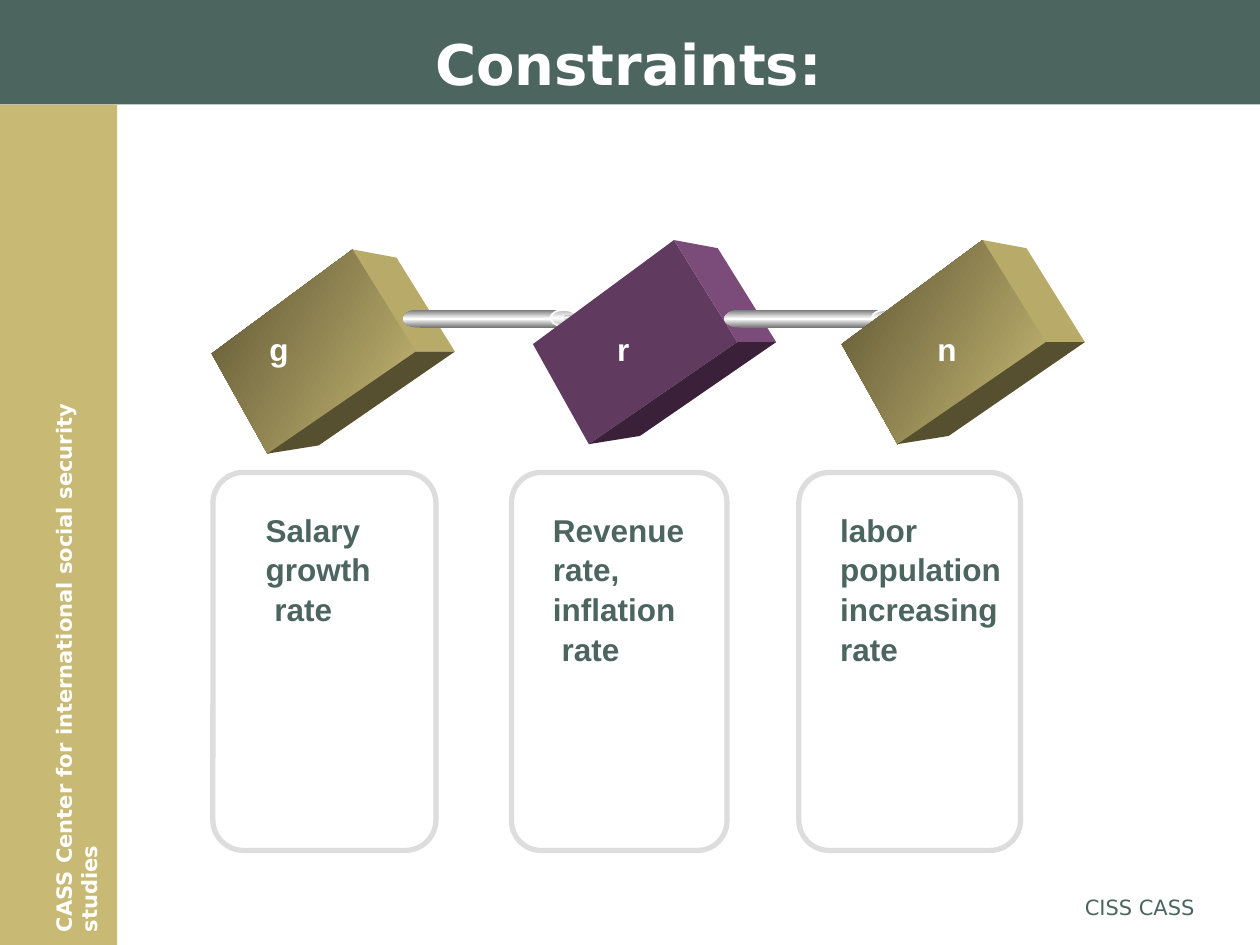
from copy import deepcopy

from pptx import Presentation, util as u
from pptx.dml.color import RGBColor
from pptx.enum import shapes as sh, text as tx

COLUMNS, ROWS = 100, 75
GREEN, SAND, WHITE, GREY = "4C665F", "C8BA74", "FFFFFF", "DDDDDD"
STEEL = ["767676", WHITE, "767676"]
PALE_STEEL = ["B6B6B6", WHITE, "B6B6B6"]
GOLD_FACES = (["5C5433", SAND], "B8AB69", "575030")
PURPLE_FACES = ("613A60", "7B4B7A", "3A2139")

# Corners of a tilted block, as shares of its box: front, side and base
LEFT, TOP, INNER, BOTTOM = (0, 0.51), (0.58, 0), (0.84, 0.5), (0.23, 1)
FAR_TOP, FAR_RIGHT, FAR_BOTTOM = (0.76, 0.04), (1, 0.5), (0.44, 0.96)
BLOCK_FACES = ((LEFT, TOP, INNER, BOTTOM),
               (TOP, FAR_TOP, FAR_RIGHT, INNER),
               (INNER, FAR_RIGHT, FAR_BOTTOM, BOTTOM))

prs = Presentation()
prs.slide_width, prs.slide_height = u.Inches(10), u.Inches(7.5)
COL, ROW = prs.slide_width / COLUMNS, prs.slide_height / ROWS


def rgb(colour):
    return RGBColor.from_string(colour)


def grid(left, top, width, height):
    return [round(n * unit) for n, unit in
            zip((left, top, width, height), (COL, ROW, COL, ROW))]


def paint(shape, fill=None, line=None, line_width=1, angle=90):
    """Fill with one colour, a list of gradient colours, or nothing."""
    shape.shadow.inherit = False
    if isinstance(fill, list):
        shape.fill.gradient()
        shape.fill.gradient_angle = angle
        stop_list = shape.fill._fill._gradFill.gsLst
        while len(stop_list) < len(fill):
            stop_list.append(deepcopy(stop_list[0]))
        for i, (stop, colour) in enumerate(zip(shape.fill.gradient_stops, fill)):
            stop.position = i / (len(fill) - 1)
            stop.color.rgb = rgb(colour)
    elif fill:
        shape.fill.solid()
        shape.fill.fore_color.rgb = rgb(fill)
    else:
        shape.fill.background()
    if line:
        shape.line.color.rgb = rgb(line)
        shape.line.width = u.Pt(line_width)
    else:
        shape.line.fill.background()


def add_preset(slide, kind, box, **look):
    shape = slide.shapes.add_shape(kind, *grid(*box))
    paint(shape, **look)
    return shape


def write(frame, lines, size=18, colour=WHITE, font="Arial", bold=True,
          align=tx.PP_ALIGN.LEFT, anchor=tx.MSO_ANCHOR.TOP, wrap=True, spacing=1.0):
    frame.word_wrap = wrap
    frame.auto_size = tx.MSO_AUTO_SIZE.NONE
    frame.vertical_anchor = anchor
    for i, line in enumerate(lines):
        paragraph = frame.add_paragraph() if i else frame.paragraphs[0]
        paragraph.text = line
        paragraph.alignment = align
        paragraph.line_spacing = spacing
        paragraph.font.size = u.Pt(size)
        paragraph.font.bold = bold
        paragraph.font.name = font
        paragraph.font.color.rgb = rgb(colour)


def add_text(slide, box, lines, **look):
    holder = slide.shapes.add_textbox(*grid(*box))
    write(holder.text_frame, lines, **look)
    return holder


def add_frame(slide, title_text, motto, footer):
    """Title band, sidebar and footer."""
    band, side = 8.3, 9.3
    rect = sh.MSO_SHAPE.RECTANGLE
    add_preset(slide, rect, (0, 0, COLUMNS, band), fill=GREEN)
    add_preset(slide, rect, (0, band, side, ROWS - band), fill=SAND)
    title = slide.shapes.title
    title.left, title.top, title.width, title.height = grid(9.5, 1.9, 80.8, 6.2)
    write(title.text_frame, [title_text], size=32, font="DejaVu Sans",
          align=tx.PP_ALIGN.CENTER, anchor=tx.MSO_ANCHOR.MIDDLE)
    slide.shapes._spTree.append(title._element)
    add_text(slide, (-20.4, 48, 50.9, 3), [motto], size=12,
             font="DejaVu Sans").rotation = 270
    add_text(slide, (68.3, 70.5, 27.5, 3.5), [footer], size=12, colour=GREEN,
             font="DejaVu Sans", bold=False, align=tx.PP_ALIGN.RIGHT)


def add_card(slide, left, width, inset, caption_width, lines):
    top = 37.5
    card = add_preset(slide, sh.MSO_SHAPE.ROUNDED_RECTANGLE, (left, top, width, 30),
                      line=GREY, line_width=3)
    card.adjustments[0] = 0.137
    add_text(slide, (left + inset, top + 2.4, caption_width, 16), lines,
             colour=GREEN, spacing=1.05)


def add_block(slide, left, top, faces):
    width, height = 19.3, 16.2
    for corners, fill in zip(BLOCK_FACES, faces):
        points = [(round((left + x * width) * COL), round((top + y * height) * ROW))
                  for x, y in corners]
        builder = slide.shapes.build_freeform(*points[0])
        builder.add_line_segments(points[1:], close=True)
        paint(builder.convert_to_shape(), fill=fill, angle=330)


def add_rod(slide, left):
    top, oval = 24.6, sh.MSO_SHAPE.OVAL
    add_preset(slide, oval, (left, top, 2.3, 1.4), fill=STEEL)
    add_preset(slide, sh.MSO_SHAPE.RECTANGLE, (left + 1.3, top, 11.5, 1.4), fill=STEEL)
    add_preset(slide, oval, (left + 11.7, top, 2.1, 1.3), fill=PALE_STEEL, line=WHITE)
    add_preset(slide, oval, (left + 12.8, top + 0.4, 0.6, 0.4), fill=PALE_STEEL)


def main():
    slide = prs.slides.add_slide(prs.slide_layouts[5])
    add_frame(slide, "Constraints:",
              "CASS Center for international social security studies", "CISS CASS")

    for card in (
        (16.9, 17.7, 3.2, 11.8, ["Salary growth", " rate"]),
        (40.6, 17.1, 2.3, 14.2, ["Revenue", "rate,", "inflation", " rate"]),
        (63.4, 17.6, 2.3, 17.4, ["labor", "population", "increasing", "rate"]),
    ):
        add_card(slide, *card)

    add_block(slide, 16.8, 19.8, GOLD_FACES)
    add_rod(slide, 32)
    add_block(slide, 42.3, 19.05, PURPLE_FACES)
    add_rod(slide, 57.5)
    add_block(slide, 66.8, 19.05, GOLD_FACES)
    for symbol, left in (("g", 20.4), ("r", 48), ("n", 73.4)):
        add_text(slide, (left, 25.7, 3.5, 4), [symbol], wrap=False)

    prs.save("out.pptx")


if __name__ == "__main__":
    main()
